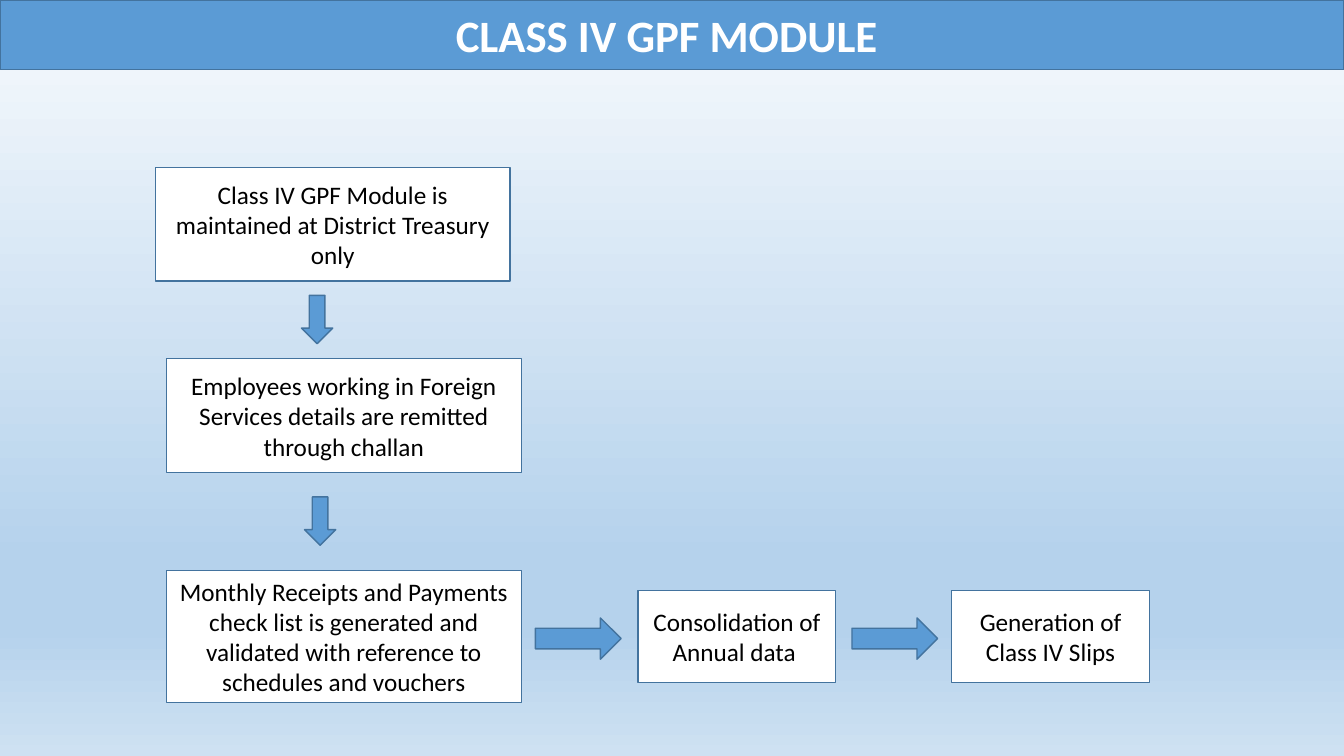
from lxml import etree
from pptx import Presentation
from pptx.dml.color import RGBColor
from pptx.enum.shapes import MSO_SHAPE
from pptx.enum.text import MSO_ANCHOR, MSO_AUTO_SIZE, PP_ALIGN
from pptx.oxml.ns import qn
from pptx.util import Inches, Pt

RECTANGLE = MSO_SHAPE.RECTANGLE
DOWN_ARROW = MSO_SHAPE.DOWN_ARROW
RIGHT_ARROW = MSO_SHAPE.RIGHT_ARROW
MIDDLE = MSO_ANCHOR.MIDDLE
CENTER = PP_ALIGN.CENTER
NO_AUTOFIT = MSO_AUTO_SIZE.NONE

BLUE = RGBColor(0x5B, 0x9B, 0xD5)
DARK_BLUE = RGBColor(0x43, 0x73, 0x9E)
WHITE = RGBColor(0xFF, 0xFF, 0xFF)
BLACK = RGBColor(0x00, 0x00, 0x00)
PALE_SKY = RGBColor(0xF7, 0xFA, 0xFD)
SKY = RGBColor(0xB5, 0xD2, 0xEC)
LIGHT_SKY = RGBColor(0xCE, 0xE1, 0xF2)

TITLE_ONLY = 5
SLIDE_WIDTH, SLIDE_HEIGHT = 13.33, 7.5


class FlowSlide:
    font_name = "Calibri"
    line_width = Pt(1)

    def __init__(self, presentation):
        self.slide = presentation.slides.add_slide(presentation.slide_layouts[TITLE_ONLY])

    def background(self, stops):
        fill = self.slide.background.fill
        fill.gradient()
        fill.gradient_angle = 270
        stop_list = next(self.slide.element.iter(qn("a:gsLst")))
        for old_stop in list(stop_list):
            stop_list.remove(old_stop)
        for percent, color in stops:
            stop = etree.SubElement(stop_list, qn("a:gs"), pos=str(percent * 1000))
            etree.SubElement(stop, qn("a:srgbClr"), val=str(color))

    def paint(self, shape, color):
        shape.fill.solid()
        shape.fill.fore_color.rgb = color
        shape.line.color.rgb = DARK_BLUE
        shape.line.width = self.line_width

    def label(self, shape, text, size, color, bold=False):
        frame = shape.text_frame
        frame.word_wrap = True
        frame.auto_size = NO_AUTOFIT
        frame.vertical_anchor = MIDDLE
        paragraph = frame.paragraphs[0]
        paragraph.alignment = CENTER
        run = paragraph.add_run()
        run.text = text
        run.font.name = self.font_name
        run.font.size = Pt(size)
        run.font.bold = bold
        run.font.color.rgb = color

    def title(self, text, height):
        banner = self.slide.shapes.title
        banner.left, banner.top = Inches(0), Inches(0)
        banner.width, banner.height = Inches(SLIDE_WIDTH), Inches(height)
        self.paint(banner, BLUE)
        self.label(banner, text, 32, WHITE, bold=True)

    def block(self, kind, color, left, top, width, height):
        shape = self.slide.shapes.add_shape(
            kind, Inches(left), Inches(top), Inches(width), Inches(height)
        )
        shape.shadow.inherit = False
        self.paint(shape, color)
        return shape

    def step(self, text, *place):
        self.label(self.block(RECTANGLE, WHITE, *place), text, 18, BLACK)

    def down_arrow(self, left, top):
        self.block(DOWN_ARROW, BLUE, left, top, 0.31, 0.48)

    def right_arrow(self, left, top):
        self.block(RIGHT_ARROW, BLUE, left, top, 0.85, 0.41)


def main():
    presentation = Presentation()
    presentation.slide_width = Inches(SLIDE_WIDTH)
    presentation.slide_height = Inches(SLIDE_HEIGHT)

    flow = FlowSlide(presentation)
    flow.background([(0, PALE_SKY), (74, SKY), (83, SKY), (100, LIGHT_SKY)])
    flow.title("CLASS IV GPF MODULE ", 0.69)

    treasury_steps = [
        ("Class IV GPF Module is maintained at District Treasury only", 1.54, 1.66, 1.13),
        ("Employees working in Foreign Services details are remitted through challan",
         1.65, 3.56, 1.13),
        ("Monthly Receipts and Payments check list is generated and validated "
         "with reference to schedules and vouchers", 1.65, 5.66, 1.31),
    ]
    for text, left, top, height in treasury_steps:
        flow.step(text, left, top, 3.52, height)

    annual_steps = [("Consolidation of Annual data ", 6.33), ("Generation of Class IV Slips", 9.44)]
    for text, left in annual_steps:
        flow.step(text, left, 5.86, 1.96, 0.91)

    for left, top in [(2.99, 2.93), (3.02, 4.93)]:
        flow.down_arrow(left, top)
    for left in (5.31, 8.45):
        flow.right_arrow(left, 6.13)

    presentation.save("out.pptx")


if __name__ == "__main__":
    main()
